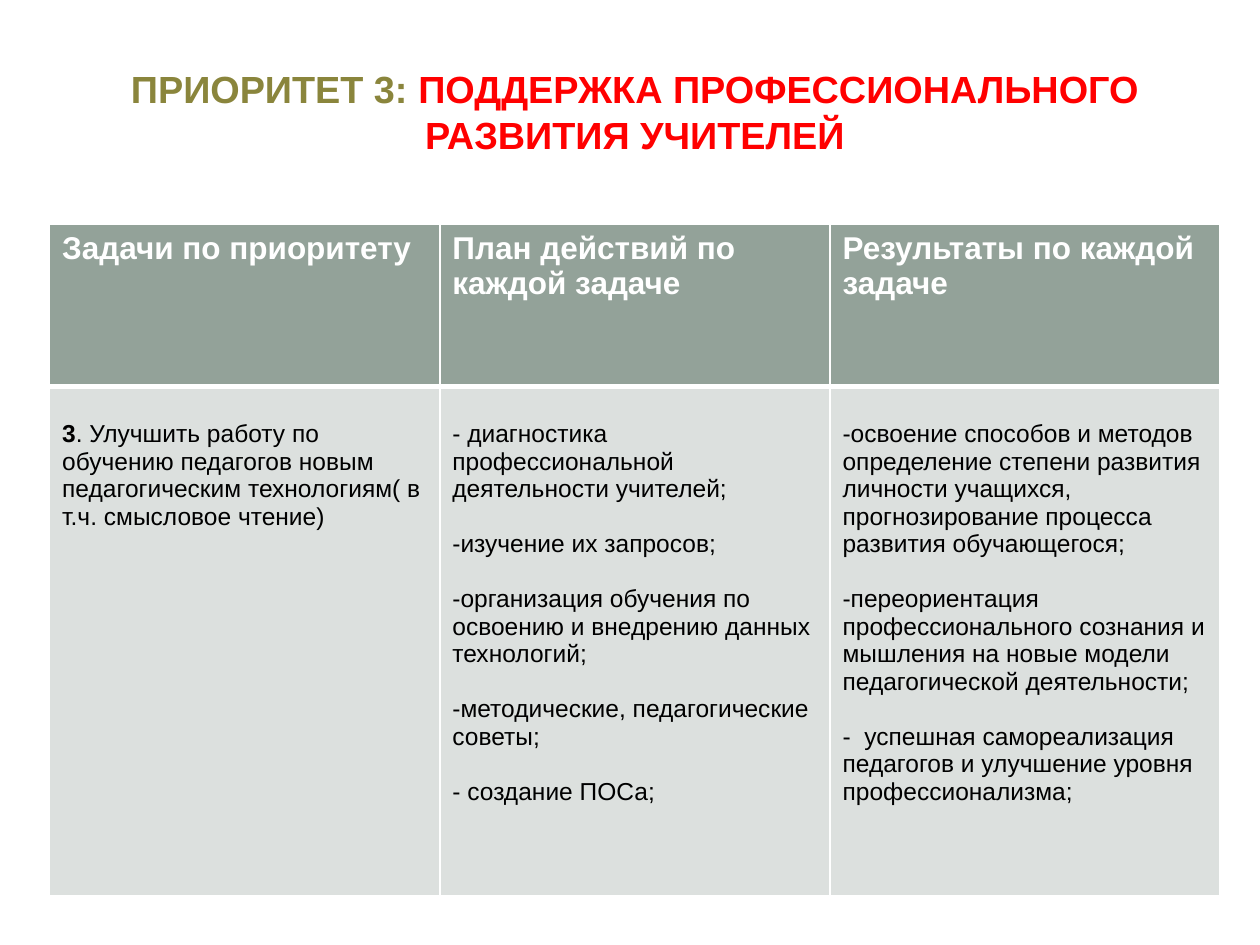
from lxml import etree
from pptx import Presentation
from pptx.dml.color import RGBColor
from pptx.enum.shapes import MSO_SHAPE
from pptx.enum.text import MSO_ANCHOR, PP_ALIGN
from pptx.oxml.ns import qn
from pptx.util import Cm, Pt

CENTER = PP_ALIGN.CENTER
MIDDLE = MSO_ANCHOR.MIDDLE
RECTANGLE = MSO_SHAPE.RECTANGLE
ROUNDED = MSO_SHAPE.ROUNDED_RECTANGLE
BLANK_LAYOUT = 6
COLORS = {"white": "FFFFFF", "black": "000000", "olive": "8A853C",
          "red": "FF0000", "header": "93A299", "body": "DCE0DE"}

TITLE = [("ПРИОРИТЕТ 3: ", "olive"),
         ("ПОДДЕРЖКА ПРОФЕССИОНАЛЬНОГО РАЗВИТИЯ УЧИТЕЛЕЙ\v", "red")]
HEADERS = ["Задачи по приоритету", "План действий по каждой задаче",
           "Результаты по каждой задаче"]
TASK_NUMBER = "3"
TASK = (". Улучшить работу по обучению педагогов новым педагогическим "
        "технологиям( в т.ч. смысловое чтение)")
# Each item: text, whether it has a dash bullet
ACTIONS = [
    (" диагностика профессиональной деятельности учителей;", True),
    ("изучение их запросов;", True),
    ("организация обучения по освоению и внедрению данных технологий;", True),
    ("методические, педагогические советы;", True),
    ("- создание ПОСа;", False),
]
RESULTS = [
    ("освоение способов и методов определение степени развития личности "
     "учащихся, прогнозирование процесса развития обучающегося;", True),
    ("переориентация профессионального сознания и мышления на новые модели "
     "педагогической деятельности;", True),
    ("-  успешная самореализация педагогов и улучшение уровня "
     "профессионализма;", False),
]


class SlideBuilder:
    """Holds the text style and the slide being built."""

    font = "Arial"
    title_size, header_size, body_size = Pt(21.6), Pt(18), Pt(14)
    item_gap = Pt(15.7)

    def __init__(self, deck):
        self.page = deck.slides.add_slide(deck.slide_layouts[BLANK_LAYOUT])

    def format_span(self, span, size, color, bold=False):
        span.font.name = self.font
        span.font.size = size
        span.font.bold = bold
        span.font.color.rgb = RGBColor.from_string(COLORS[color])

    def add_panel(self, kind, left, top, width, height, opacity=100):
        panel = self.page.shapes.add_shape(kind, left, top, width, height)
        panel.shadow.inherit = False
        panel.line.fill.background()
        panel.fill.solid()
        panel.fill.fore_color.rgb = RGBColor.from_string(COLORS["white"])
        if opacity < 100:
            color = panel._element.spPr.find(qn("a:solidFill"))[0]
            etree.SubElement(color, qn("a:alpha"), val=str(opacity * 1000))
        return panel

    def add_title(self, parts, left, top, width, height):
        frame = self.page.shapes.add_textbox(left, top, width, height).text_frame
        frame.word_wrap = True
        frame.vertical_anchor = MIDDLE
        para = frame.paragraphs[0]
        para.alignment = CENTER
        para.line_spacing = 1.02
        for text, color in parts:
            first, *rest = text.split("\v")
            span = para.add_run()
            span.text = first
            self.format_span(span, self.title_size, color, bold=True)
            for _ in rest:
                para.add_line_break()
        para.font.size = self.title_size

    def add_table(self, left, top, width, row_heights, columns):
        table = self.page.shapes.add_table(
            len(row_heights), columns, left, top, width, sum(row_heights)).table
        for row, height in zip(table.rows, row_heights):
            row.height = height
        return table

    def style_cell(self, cell, fill, **borders):
        """Fill the cell and draw white borders, given as side=points."""
        properties = cell._tc.get_or_add_tcPr()
        for side in "LRTB":
            line = etree.SubElement(properties, qn(f"a:ln{side}"),
                                    w=str(Pt(borders.get(side, 1))))
            solid = etree.SubElement(line, qn("a:solidFill"))
            etree.SubElement(solid, qn("a:srgbClr"), val=COLORS["white"])
        cell.fill.solid()
        cell.fill.fore_color.rgb = RGBColor.from_string(COLORS[fill])

    def fill_header(self, cell, text):
        self.style_cell(cell, "header", B=3)
        cell.text_frame.text = text
        self.format_span(cell.text_frame.paragraphs[0].runs[0],
                         self.header_size, "white", bold=True)

    def fill_body(self, cell, items):
        self.style_cell(cell, "body", T=3)
        cell.margin_top = Cm(0.13) + self.item_gap
        cell.text_frame.text = "\n".join(text for text, _ in items)
        for index, para in enumerate(cell.text_frame.paragraphs):
            if index:
                para.space_before = self.item_gap
            if items[index][1]:
                self.add_dash(para)
            for span in para.runs:
                self.format_span(span, self.body_size, "black")

    def add_dash(self, para):
        properties = para._p.get_or_add_pPr()
        properties.set("marL", "0")
        properties.set("indent", "0")
        etree.SubElement(properties, qn("a:buFont"), typeface=self.font)
        etree.SubElement(properties, qn("a:buChar"), char="-")


def main():
    deck = Presentation()
    deck.slide_width, deck.slide_height = Cm(25.4), Cm(19.05)
    builder = SlideBuilder(deck)
    backdrop = builder.add_panel(ROUNDED, Cm(0.25), Cm(0.28), Cm(24.9), Cm(18.52))
    backdrop.adjustments[0] = 0.02
    builder.add_panel(RECTANGLE, Cm(0.76), Cm(0.76), Cm(23.88), Cm(3.68), opacity=83)
    builder.add_panel(RECTANGLE, Cm(1.04), Cm(1.04), Cm(23.29), Cm(3.1))
    builder.add_title(TITLE, Cm(1.33), Cm(1.5), Cm(22.94), Cm(2.39))

    table = builder.add_table(Cm(1), Cm(4.53), Cm(23.6),
                              [Cm(3.26), Cm(10.27)], len(HEADERS))
    for column, header in enumerate(HEADERS):
        builder.fill_header(table.cell(0, column), header)
    for column, items in enumerate([[(TASK_NUMBER, False)], ACTIONS, RESULTS]):
        builder.fill_body(table.cell(1, column), items)
    task_para = table.cell(1, 0).text_frame.paragraphs[0]
    task_para.runs[0].font.bold = True
    span = task_para.add_run()
    span.text = TASK
    builder.format_span(span, builder.body_size, "black")

    deck.save("out.pptx")


if __name__ == "__main__":
    main()
